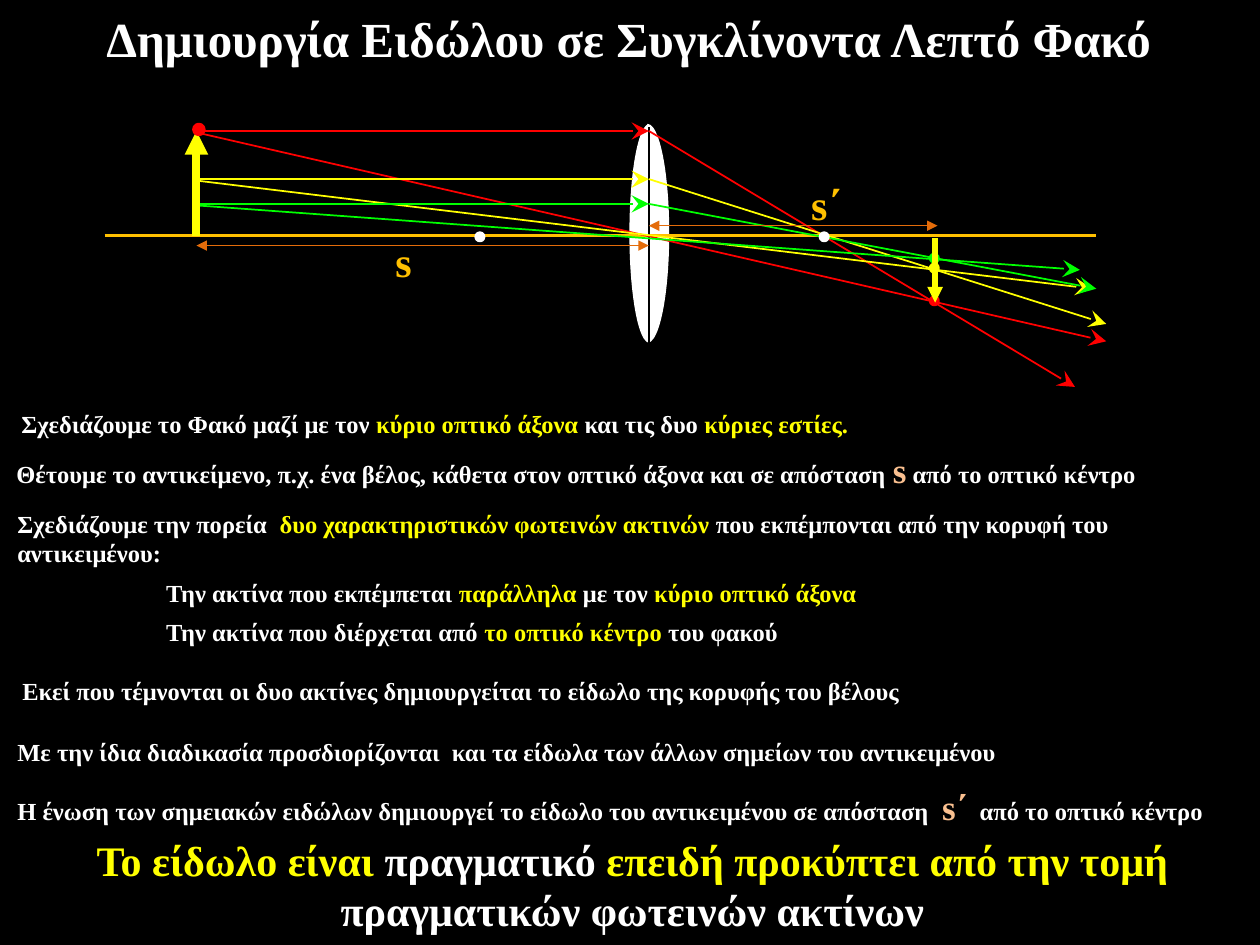
"""Builds the slide on image formation by a thin converging lens."""
from lxml import etree
from pptx import Presentation
from pptx import util as u
from pptx.dml.color import RGBColor
from pptx.enum import shapes, text
from pptx.oxml import ns

BLACK = RGBColor(0x00, 0x00, 0x00)
WHITE = RGBColor(0xFF, 0xFF, 0xFF)
RED = RGBColor(0xFF, 0x00, 0x00)
YELLOW = RGBColor(0xFF, 0xFF, 0x00)
GREEN = RGBColor(0x00, 0xFF, 0x00)
GOLD = RGBColor(0xFF, 0xC0, 0x00)
ORANGE = RGBColor(0xE4, 0x6C, 0x0A)
PEACH = RGBColor(0xFA, 0xC0, 0x90)

deck = Presentation()
deck.slide_width, deck.slide_height = u.Cm(25.4), u.Cm(19.05)
slide = deck.slides.add_slide(deck.slide_layouts[6])
slide.background.fill.solid()
slide.background.fill.fore_color.rgb = BLACK


def write(runs, place, size=14, align=text.PP_ALIGN.LEFT, wrap=True):
    frame = slide.shapes.add_textbox(*map(u.Cm, place)).text_frame
    frame.word_wrap = wrap
    if not wrap:
        frame.auto_size = text.MSO_AUTO_SIZE.SHAPE_TO_FIT_TEXT
    paragraph = frame.paragraphs[0]
    paragraph.alignment = align
    for words, color, *own_size in runs:
        run = paragraph.add_run()
        run.text = words
        run.font.name = "Times New Roman"
        run.font.bold = True
        run.font.size = u.Pt(own_size[0] if own_size else size)
        run.font.color.rgb = color


def draw_line(start, end, color, width, head=None, tail=None, tip="med"):
    line = slide.shapes.add_connector(shapes.MSO_CONNECTOR.STRAIGHT, *map(u.Cm, start + end))
    line.line.color.rgb = color
    line.line.width = u.Pt(width)
    stroke = line.line._get_or_add_ln()
    for tag, kind in (("a:headEnd", head), ("a:tailEnd", tail)):
        if kind:
            etree.SubElement(stroke, ns.qn(tag), type=kind, w=tip, len=tip)
    etree.SubElement(line._element.spPr, ns.qn("a:effectLst"))


object_x, lens_x, image_x, axis_y = 3.96, 13.08, 18.85, 4.75

for left, width, turn in ((12.62, 0.86, 0), (12.7, 0.79, 180)):
    half = slide.shapes.add_shape(
        shapes.MSO_SHAPE.ARC, u.Cm(left), u.Cm(2.51), u.Cm(width), u.Cm(4.39))
    half.adjustments[0], half.adjustments[1] = 162, 53.74
    half.rotation = turn
    half.shadow.inherit = False
    half.fill.solid()
    half.fill.fore_color.rgb = WHITE
    half.line.color.rgb = WHITE
    half.line.width = u.Pt(0.75)

draw_line((2.11, axis_y), (22.1, axis_y), GOLD, 1.5)
draw_line((lens_x, 2.57), (lens_x, 6.96), BLACK, 1.5)

for color, level, refracted_end, central_end in (
    (RED, 2.64, (21.67, 7.8), (22.3, 6.88)),
    (YELLOW, 3.61, (22.3, 6.53), (22.02, 5.82)),
    (GREEN, 4.11, (22.1, 5.82), (21.77, 5.44)),
):
    for start, end in (
        ((object_x, level), (lens_x, level)),
        ((lens_x, level), refracted_end),
        ((object_x, level + 0.03), central_end),
    ):
        draw_line(start, end, color, 1, tail="stealth", tip="lg")

draw_line((object_x, axis_y), (object_x, 2.64), YELLOW, 4.5, tail="triangle")

for left, top, size, color in (
    (9.6, 4.7, 0.15, WHITE),
    (16.54, 4.7, 0.15, WHITE),
    (3.91, 2.51, 0.2, RED),
    (18.76, 5.99, 0.15, RED),
    (18.76, 5.33, 0.15, YELLOW),
    (18.76, 5.13, 0.15, GREEN),
):
    point = slide.shapes.add_shape(
        shapes.MSO_SHAPE.OVAL, u.Cm(left), u.Cm(top), u.Cm(size), u.Cm(size))
    point.shadow.inherit = False
    point.fill.solid()
    point.fill.fore_color.rgb = color
    point.line.color.rgb = color
    point.line.width = u.Pt(2)

draw_line((image_x, 4.8), (image_x, 6.1), YELLOW, 3, tail="triangle")

for start_x, end_x, y in ((object_x, lens_x, 4.95), (lens_x, 18.9, 4.55)):
    draw_line((start_x, y), (end_x, y), ORANGE, 0.75, head="triangle", tail="triangle")

write([("s", GOLD)], (7.72, 4.62, 0.84, 1.27), size=24, wrap=False)
write([("s΄", GOLD)], (16.1, 3.48, 1.14, 1.27), size=24, wrap=False)

write([("Δημιουργία Ειδώλου σε Συγκλίνοντα Λεπτό Φακό", WHITE)],
      (-0.03, 0.05, 25.4, 1.19), size=28, align=text.PP_ALIGN.CENTER)

for place, runs in (
    ((0.18, 8.13, 24.31, 0.99), [
        ("Σχεδιάζουμε το Φακό μαζί με τον ", WHITE), ("κύριο οπτικό άξονα ", YELLOW),
        ("και τις δυο ", WHITE), ("κύριες εστίες.", YELLOW)]),
    ((0.08, 8.92, 23.42, 1.22), [
        ("Θέτουμε το αντικείμενο, π.χ. ένα βέλος, κάθετα στον οπτικό άξονα "
         "και σε απόσταση ", WHITE),
        ("s", PEACH, 20), (" από το οπτικό κέντρο", WHITE)]),
    ((0.1, 10.13, 24.71, 1.6), [
        ("Σχεδιάζουμε την πορεία  ", WHITE),
        ("δυο χαρακτηριστικών φωτεινών ακτινών ", YELLOW),
        ("που εκπέμπονται από την κορυφή του αντικειμένου:", WHITE)]),
    ((3.1, 11.53, 15.19, 0.97), [
        ("Την ακτίνα που εκπέμπεται ", WHITE), ("παράλληλα", YELLOW),
        (" με τον ", WHITE), ("κύριο οπτικό άξονα", YELLOW)]),
    ((3.1, 12.32, 13.16, 1.09), [
        ("Την ακτίνα που διέρχεται από ", WHITE), ("το οπτικό κέντρο ", YELLOW),
        ("του φακού", WHITE)]),
    ((0.2, 13.51, 18.29, 1.19), [
        ("Εκεί που τέμνονται οι δυο ακτίνες δημιουργείται το είδωλο "
         "της κορυφής του βέλους", WHITE)]),
    ((0.1, 14.73, 21.21, 1.19), [
        ("Με την ίδια διαδικασία προσδιορίζονται  και τα είδωλα "
         "των άλλων σημείων του αντικειμένου", WHITE)]),
    ((0.1, 15.72, 24.71, 1.19), [
        ("Η ένωση των σημειακών ειδώλων δημιουργεί το είδωλο "
         "του αντικειμένου σε απόσταση  ", WHITE),
        ("s΄", PEACH, 20), ("  από το οπτικό κέντρο", WHITE)]),
):
    write(runs, place)

write([("Το είδωλο είναι ", YELLOW), ("πραγματικό", WHITE),
       (" επειδή προκύπτει από την τομή ", YELLOW),
       ("πραγματικών φωτεινών ακτίνων", WHITE)],
      (0.1, 16.69, 25.3, 2.24), size=24, align=text.PP_ALIGN.CENTER)

deck.save("out.pptx")
